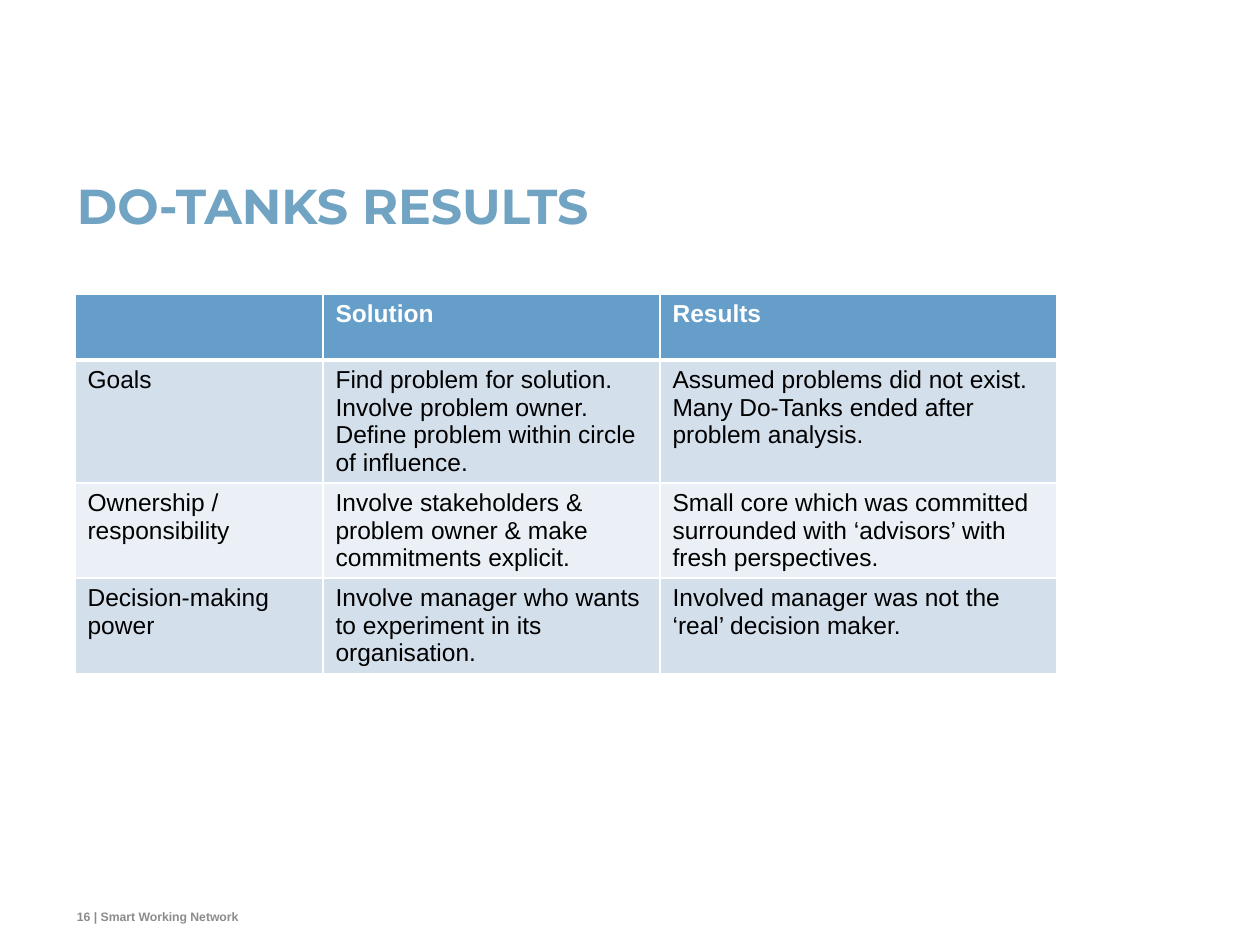
from dataclasses import dataclass

from lxml.etree import SubElement
from pptx import Presentation
from pptx.dml.color import RGBColor
from pptx.enum.text import MSO_ANCHOR, MSO_AUTO_SIZE, PP_ALIGN
from pptx.oxml.ns import qn
from pptx.util import Emu, Pt


@dataclass(frozen=True)
class Theme:
    title_font: str = "Montserrat"
    body_font: str = "Arial"
    title_size: int = 28
    table_size: int = 14
    footer_size: int = 7
    title: str = "71A4C3"
    footer: str = "8C8C8C"
    header_fill: str = "649EC9"
    header_text: str = "FFFFFF"
    body_text: str = "000000"
    border: str = "FFFFFF"
    bands: tuple = ("D3DFEB", "EAF0F5")


THEME = Theme()
COLUMN_WIDTHS = (248, 337, 397)
ROW_HEIGHTS = (66, 123, 95, 95)
RESULTS = (
    ((), ("Solution",), ("Results",)),
    (
        ("Goals",),
        (
            "Find problem for solution.",
            "Involve problem owner.",
            "Define problem within circle of influence.",
        ),
        ("Assumed problems did not exist. Many Do-Tanks ended after problem analysis.",),
    ),
    (
        ("Ownership / responsibility",),
        ("Involve stakeholders & problem owner & make commitments explicit.",),
        ("Small core which was committed surrounded with ‘advisors’ with fresh perspectives.",),
    ),
    (
        ("Decision-making power",),
        ("Involve manager who wants to experiment in its organisation.",),
        ("Involved manager was not the ‘real’ decision maker.",),
    ),
)


def px(length):
    return Emu(round(length * 914400 / 126))


def box(*lengths):
    return [px(length) for length in lengths]


def write(frame, lines, font, size, color, bold):
    for index, line in enumerate(lines):
        paragraph = frame.add_paragraph() if index else frame.paragraphs[0]
        paragraph.alignment = PP_ALIGN.LEFT
        run = paragraph.add_run()
        run.text = line
        run.font.name = font
        run.font.size = Pt(size)
        run.font.bold = bold
        run.font.color.rgb = RGBColor.from_string(color)


def prepare_frame(frame, anchor):
    frame.margin_left = frame.margin_right = frame.margin_top = frame.margin_bottom = 0
    frame.word_wrap = True
    frame.auto_size = MSO_AUTO_SIZE.NONE
    frame.vertical_anchor = anchor


def add_title(slide, text):
    title = slide.shapes.title
    title.left, title.top, title.width, title.height = box(77, 185, 1110, 100)
    prepare_frame(title.text_frame, MSO_ANCHOR.TOP)
    write(title.text_frame, [text], THEME.title_font, THEME.title_size, THEME.title, True)
    title.text_frame.paragraphs[0].line_spacing = Pt(THEME.title_size)


def add_footer(slide, text):
    footer = slide.shapes.add_textbox(*box(77, 900, 595, 24))
    prepare_frame(footer.text_frame, MSO_ANCHOR.BOTTOM)
    write(footer.text_frame, [text], THEME.body_font, THEME.footer_size, THEME.footer, True)


def set_borders(cell, top, bottom):
    properties = cell._tc.get_or_add_tcPr()
    for side, width in (("L", 1), ("R", 1), ("T", top), ("B", bottom)):
        line = SubElement(properties, qn(f"a:ln{side}"), w=str(Pt(width)))
        fill = SubElement(line, qn("a:solidFill"))
        SubElement(fill, qn("a:srgbClr"), val=THEME.border)


def fill_cell(cell, lines, row):
    is_header = row == 0
    set_borders(cell, top=3 if row == 1 else 1, bottom=3 if is_header else 1)
    background = THEME.header_fill if is_header else THEME.bands[(row - 1) % 2]
    cell.fill.solid()
    cell.fill.fore_color.rgb = RGBColor.from_string(background)
    color = THEME.header_text if is_header else THEME.body_text
    write(cell.text_frame, lines, THEME.body_font, THEME.table_size, color, is_header)


def add_results_table(slide):
    frame = slide.shapes.add_table(
        len(ROW_HEIGHTS), len(COLUMN_WIDTHS),
        *box(75, 294, sum(COLUMN_WIDTHS), sum(ROW_HEIGHTS)),
    )
    table = frame.table
    for column, width in zip(table.columns, COLUMN_WIDTHS):
        column.width = px(width)
    for row, height in zip(table.rows, ROW_HEIGHTS):
        row.height = px(height)
    for row, entries in enumerate(RESULTS):
        for column, lines in enumerate(entries):
            fill_cell(table.cell(row, column), lines, row)


def main():
    presentation = Presentation()
    presentation.slide_width, presentation.slide_height = box(1260, 945)
    slide = presentation.slides.add_slide(presentation.slide_layouts[5])
    add_title(slide, "DO-TANKS RESULTS")
    add_footer(slide, "16 | Smart Working Network")
    add_results_table(slide)
    presentation.save("out.pptx")


if __name__ == "__main__":
    main()
